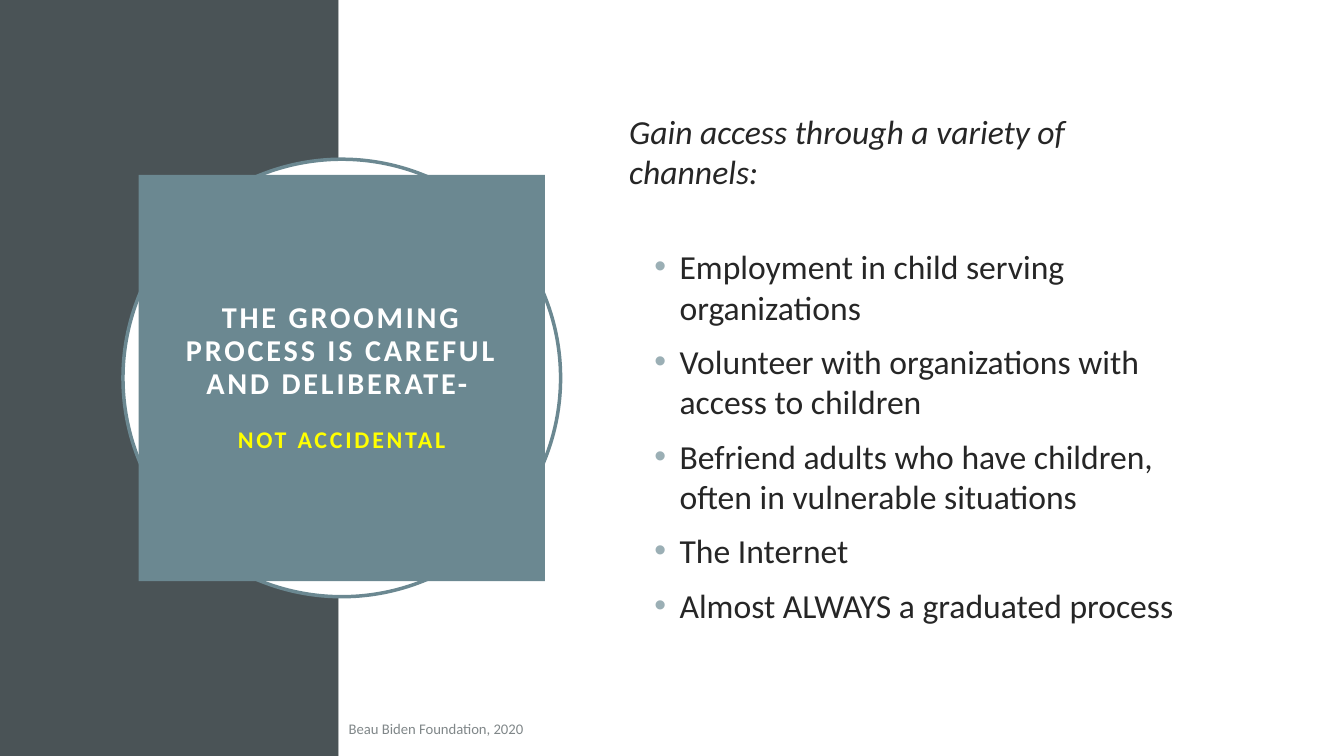
from lxml.etree import SubElement
from pptx import Presentation
from pptx.dml.color import RGBColor
from pptx.enum.shapes import MSO_SHAPE
from pptx.enum.text import MSO_ANCHOR, MSO_AUTO_SIZE, PP_ALIGN
from pptx.oxml.ns import qn
from pptx.util import Inches, Pt

WIDTH, HEIGHT = 13.33, 7.5
BAND = 3.36
SLATE, TEAL, WHITE, INK = "4A5356", "6B8891", "FFFFFF", "262626"
CHANNELS = [
    "Employment in child serving organizations",
    "Volunteer with organizations with access to children",
    "Befriend adults who have children, often in vulnerable situations",
    "The Internet",
    "Almost ALWAYS a graduated process",
]


def color(value):
    return RGBColor.from_string(value)


def place(shape, box):
    for name, value in zip(("left", "top", "width", "height"), box):
        setattr(shape, name, Inches(value))


def centered(center, size):
    return center[0] - size / 2, center[1] - size / 2, size, size


def set_frame(shape, inset=None):
    frame = shape.text_frame
    settings = {"word_wrap": True, "auto_size": MSO_AUTO_SIZE.NONE,
                "vertical_anchor": MSO_ANCHOR.MIDDLE}
    if inset is not None:
        for side in ("left", "right", "top", "bottom"):
            settings[f"margin_{side}"] = Inches(inset)
    for name, value in settings.items():
        setattr(frame, name, value)
    return frame


def write(para, text, size, ink, spacing=None, layout=None, **style):
    span = para.add_run()
    span.text = text
    span.font.color.rgb = color(ink)
    for name, value in {"name": "Calibri", "size": Pt(size), **style}.items():
        setattr(span.font, name, value)
    if spacing:
        span.font._element.set("spc", str(spacing * 100))
    for name, value in (layout or {}).items():
        setattr(para, name, value)


def set_bullet(para, shown):
    props = para._p.get_or_add_pPr()
    props.set("marL", str(Inches(0.5) if shown else 0))
    props.set("indent", str(Inches(-0.25) if shown else 0))
    if not shown:
        SubElement(props, qn("a:buNone"))
        return
    tint = SubElement(props, qn("a:buClr"))
    SubElement(tint, qn("a:srgbClr"), val="9BAFB5")
    SubElement(props, qn("a:buFont"), typeface="Arial")
    SubElement(props, qn("a:buChar"), char="•")


def add_backdrop(page, kind, box, fill, line=None):
    shape = page.shapes.add_shape(kind, *map(Inches, box))
    shape.shadow.inherit = False
    shape.fill.solid()
    shape.fill.fore_color.rgb = color(fill)
    if line:
        shape.line.color.rgb = color(line)
        shape.line.width = Pt(2.5)
    else:
        shape.line.fill.background()
    # Keep backdrops behind the placeholders
    page.shapes.title.element.addprevious(shape.element)


def add_title(page, center):
    add_backdrop(page, MSO_SHAPE.OVAL, centered(center, 4.34), WHITE, TEAL)
    title = page.shapes.title
    place(title, centered(center, 4.03))
    title.fill.solid()
    title.fill.fore_color.rgb = color(TEAL)
    frame = set_frame(title, 0.2)
    layout = {"alignment": PP_ALIGN.CENTER, "line_spacing": 0.9, "space_before": Pt(0)}
    write(frame.paragraphs[0], "THE GROOMING PROCESS IS CAREFUL AND DELIBERATE- ",
          21.6, WHITE, 2, layout, bold=True)
    write(frame.add_paragraph(), "NOT ACCIDENTAL", 17.1, "FFFF00", 2,
          {**layout, "space_before": Pt(19)}, bold=True)


def add_channels(page, box):
    body = page.placeholders[1]
    place(body, box)
    frame = set_frame(body)
    lead = frame.paragraphs[0]
    set_bullet(lead, False)
    write(lead, "Gain access through a variety of channels:", 24, INK,
          layout={"space_before": Pt(0), "space_after": Pt(29)}, italic=True)
    for channel in CHANNELS:
        para = frame.add_paragraph()
        para.level = 1
        set_bullet(para, True)
        write(para, channel, 24, INK, layout={"space_before": Pt(10)})


def add_credit(page, box):
    credit = page.shapes.add_textbox(*map(Inches, box))
    write(set_frame(credit).paragraphs[0], "Beau Biden Foundation, 2020", 10.5, "808789")


def main():
    deck = Presentation()
    deck.slide_width, deck.slide_height = Inches(WIDTH), Inches(HEIGHT)
    page = deck.slides.add_slide(deck.slide_layouts[1])
    # Two background panels
    add_backdrop(page, MSO_SHAPE.RECTANGLE, (0, 0, BAND, HEIGHT), SLATE)
    add_backdrop(page, MSO_SHAPE.RECTANGLE, (BAND, 0, WIDTH - BAND, HEIGHT), WHITE)
    # Title badge, list and source credit
    add_title(page, (3.39, HEIGHT / 2))
    add_channels(page, (6.14, 0.82, 5.82, 5.66))
    add_credit(page, (BAND, 7.05, 5.31, 0.35))
    deck.save("out.pptx")


if __name__ == "__main__":
    main()
